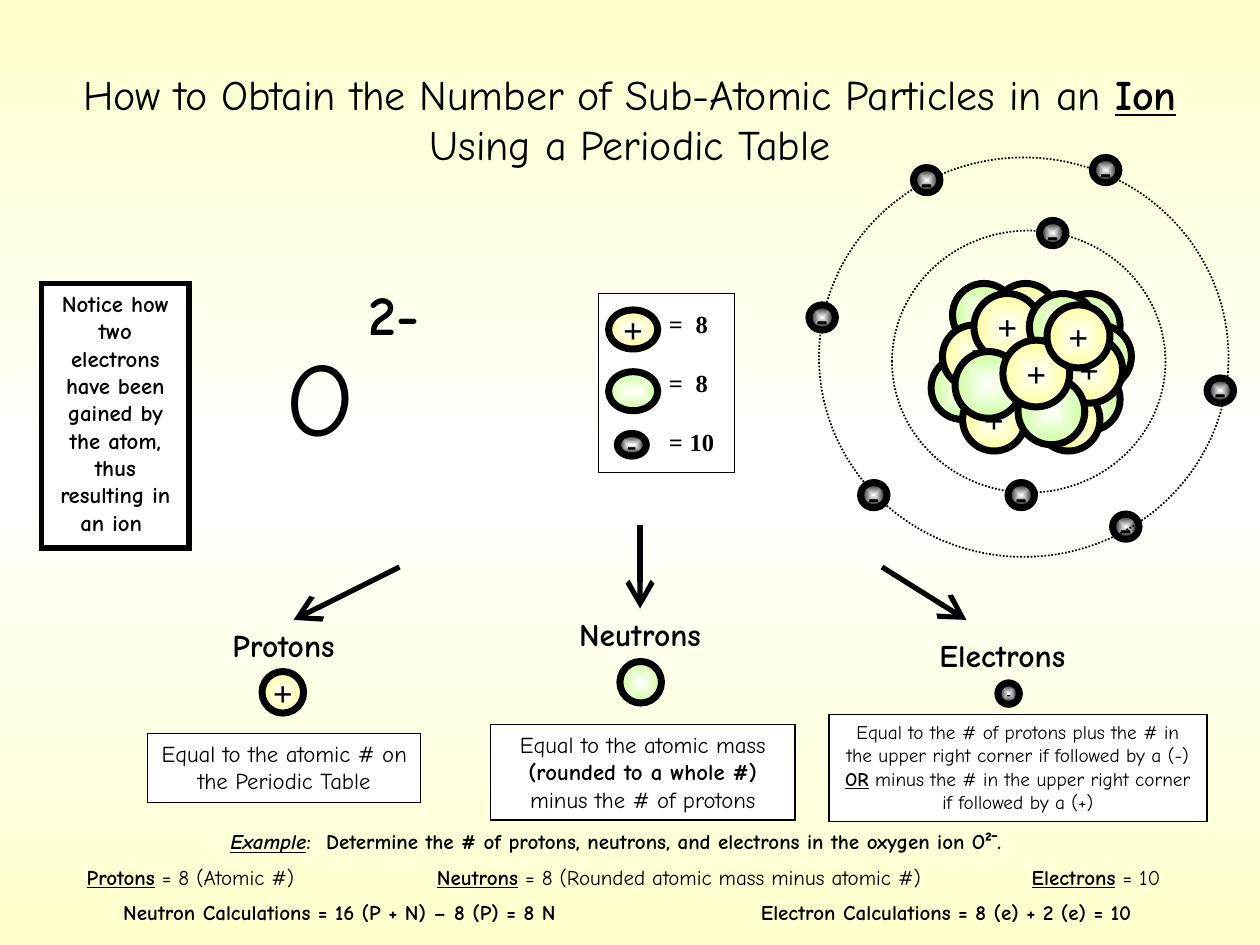
import copy
import lxml.etree
import pptx
import pptx.dml.color
import pptx.enum.dml
import pptx.enum.shapes
import pptx.enum.text
import pptx.oxml.ns
import pptx.util

Inches = pptx.util.Inches
Pt = pptx.util.Pt
qn = pptx.oxml.ns.qn
SHAPE = pptx.enum.shapes.MSO_SHAPE
ALIGN = pptx.enum.text.PP_ALIGN
ANCHOR = pptx.enum.text.MSO_ANCHOR

COLOURS = {"ink": "000000", "paper": "FFFFFF", "cream": "FFFFCC",
           "proton": "FFFF99", "neutron": "CCFF99", "electron": "000000"}
SYMBOLS = {"proton": "+", "neutron": "", "electron": "-"}
BODY_FONT = "Comic Neue"
SYMBOL_FONT = "Times New Roman"


def colour(name):
    return pptx.dml.color.RGBColor.from_string(COLOURS[name])


def box(left, top, width, height):
    return [Inches(value) for value in (left, top, width, height)]


class SlideBuilder:
    def __init__(self, slide):
        self.slide = slide

    def background(self):
        fill = self.slide.background.fill
        fill.gradient()
        fill.gradient_angle = 90
        stops = self.slide._element.find(".//" + qn("a:gsLst"))
        stops.insert(1, copy.deepcopy(stops[0]))
        for stop, position, name in zip(fill.gradient_stops, (0, 0.5, 1), ("cream", "paper", "cream")):
            stop.position = position
            stop.color.rgb = colour(name)

    def runs(self, paragraph, pieces, size, font=BODY_FONT):
        for text, style in pieces:
            run = paragraph.add_run()
            run.text = text
            run.font.name = font
            run.font.size = Pt(size)
            run.font.color.rgb = colour("ink")
            run.font.bold = "b" in style
            run.font.italic = "i" in style
            run.font.underline = "u" in style

    def title(self, place, pieces, size):
        shape = self.slide.shapes.title
        shape.left, shape.top, shape.width, shape.height = box(*place)
        shape.text_frame.vertical_anchor = ANCHOR.MIDDLE
        paragraph = shape.text_frame.paragraphs[0]
        paragraph.alignment = ALIGN.CENTER
        self.runs(paragraph, pieces, size)

    def text(self, place, pieces, size, align=ALIGN.CENTER, wrap=True, font=BODY_FONT):
        shape = self.slide.shapes.add_textbox(*box(*place))
        shape.text_frame.word_wrap = wrap
        paragraph = shape.text_frame.paragraphs[0]
        paragraph.alignment = align
        self.runs(paragraph, pieces, size, font)
        return shape

    def outlined_letter(self, place, letter, size):
        shape = self.text(place, [(letter, "")], size, wrap=False)
        properties = shape.text_frame.paragraphs[0].runs[0]._r.get_or_add_rPr()
        outline = lxml.etree.Element(qn("a:ln"), w=str(Pt(0.75)))
        fill = lxml.etree.SubElement(outline, qn("a:solidFill"))
        lxml.etree.SubElement(fill, qn("a:srgbClr"), val=COLOURS["ink"])
        properties.insert(0, outline)

    def shape(self, kind, place, width):
        shape = self.slide.shapes.add_shape(kind, *box(*place))
        shape.shadow.inherit = False
        shape.line.color.rgb = colour("ink")
        shape.line.width = Pt(width)
        lxml.etree.SubElement(shape.line._get_or_add_ln(), qn("a:miter"), lim="800000")
        return shape

    def panel(self, place, pieces=(), size=13, width=0.75):
        shape = self.shape(SHAPE.RECTANGLE, place, width)
        shape.fill.solid()
        shape.fill.fore_color.rgb = colour("paper")
        frame = shape.text_frame
        frame.word_wrap = True
        frame.vertical_anchor = ANCHOR.TOP
        frame.paragraphs[0].alignment = ALIGN.CENTER
        self.runs(frame.paragraphs[0], pieces, size)

    def particle(self, kind, left, top, width, height, size=20):
        shape = self.shape(SHAPE.OVAL, (left, top, width, height), 4)
        shape.fill.gradient()
        for stop, position, name in zip(shape.fill.gradient_stops, (0, 1), ("paper", kind)):
            stop.position = position
            stop.color.rgb = colour(name)
        gradient = shape._element.spPr.find(qn("a:gradFill"))
        gradient.remove(gradient.find(qn("a:lin")))
        centre = lxml.etree.SubElement(gradient, qn("a:path"), path="shape")
        lxml.etree.SubElement(centre, qn("a:fillToRect"), l="50000", t="50000", r="50000", b="50000")
        if SYMBOLS[kind]:
            frame = shape.text_frame
            frame.word_wrap = False
            frame.vertical_anchor = ANCHOR.MIDDLE
            frame.paragraphs[0].alignment = ALIGN.CENTER
            self.runs(frame.paragraphs[0], [(SYMBOLS[kind], "b")], size, SYMBOL_FONT)

    def orbit(self, place):
        shape = self.shape(SHAPE.OVAL, place, 1)
        shape.fill.background()
        shape.line.dash_style = pptx.enum.dml.MSO_LINE.ROUND_DOT

    def arrow(self, start, end):
        points = [Inches(value) for value in start + end]
        connector = self.slide.shapes.add_connector(pptx.enum.shapes.MSO_CONNECTOR.STRAIGHT, *points)
        connector.line.color.rgb = colour("ink")
        connector.line.width = Pt(3)
        lxml.etree.SubElement(connector.line._get_or_add_ln(), qn("a:tailEnd"), type="arrow", w="lg", len="lg")
        lxml.etree.SubElement(connector._element.spPr, qn("a:effectLst"))


def main():
    presentation = pptx.Presentation()
    presentation.slide_width, presentation.slide_height = Inches(10), Inches(7.5)
    builder = SlideBuilder(presentation.slides.add_slide(presentation.slide_layouts[5]))
    builder.background()
    builder.title((0.5, 0.3, 9, 1.28), [
        ("How to Obtain the Number of Sub-Atomic Particles in an ", ""),
        ("Ion", "bu"), (" ", "b"), ("Using a Periodic Table", "")], 24)

    builder.outlined_letter((2.08, 2.58, 0.92, 1.25), "O", 60)
    builder.text((2.83, 2.17, 0.74, 0.63), [("2-", "b")], 32, ALIGN.LEFT)
    builder.panel((0.33, 2.25, 1.17, 2.1), [
        ("Notice how two electrons have been gained by the atom, thus resulting in an ion ", "b")], width=3)

    for start, end in [((3.17, 4.5), (2.33, 4.92)), ((5.08, 4.17), (5.08, 4.83)), ((7, 4.5), (7.67, 4.92))]:
        builder.arrow(start, end)
    for label, left, top in [("Protons", 1.5, 4.92), ("Neutrons", 4.33, 4.83), ("Electrons ", 7.25, 5)]:
        builder.text((left, top, 1.5, 0.4), [(label, "b")], 18)
    builder.panel((1.17, 5.82, 2.17, 0.55), [("Equal to the atomic # on the Periodic Table", "")])
    builder.panel((3.89, 5.75, 2.42, 0.76), [
        ("Equal to the atomic mass ", ""), ("(rounded to a whole #)", "b"), (" minus the # of protons", "")])
    builder.panel((6.58, 5.67, 3, 0.85), [
        ("Equal to the # of protons plus the # in the upper right corner if followed by a (-) ", ""),
        ("OR", "bu"), (" minus the # in the upper right corner if followed by a (+)", "")], 11)
    builder.particle("proton", 2.08, 5.33, 0.33, 0.33)
    builder.particle("neutron", 4.92, 5.25, 0.33, 0.33)
    builder.particle("electron", 7.92, 5.42, 0.17, 0.17, 8)

    example_rows = [
        [(1.73, 0.9, [("Example", "biu"), (":", "b")]),
         (2.49, 6, [("Determine the # of protons, neutrons, and electrons in the oxygen ion O²¯.", "b")])],
        [(0.59, 2.3, [("Protons", "bu"), (" = 8 (Atomic #)", "")]),
         (3.37, 4.4, [("Neutrons", "bu"), (" = 8 (Rounded atomic mass minus atomic #)", "")]),
         (8.09, 1.6, [("Electrons", "bu"), (" = 10", "")])],
        [(0.88, 4.2, [("Neutron Calculations = 16 (P + N) – 8 (P) = 8 N", "b")]),
         (5.94, 3.7, [("Electron Calculations = 8 (e) + 2 (e) = 10", "b")])],
    ]
    for number, cells in enumerate(example_rows):
        for left, width, pieces in cells:
            builder.text((left, 6.53 + 0.28 * number, width, 0.3), pieces, 12, ALIGN.LEFT)

    nucleus = [
        ("neutron", 0.5, [(8.39, 2.33), (7.39, 2.83), (8.48, 2.58), (8.39, 2.92), (7.56, 2.25)]),
        ("proton", 0.5, [(8.23, 3.08), (7.89, 2.25), (7.48, 2.58), (7.64, 3.08)]),
        ("proton", 0.53, [(7.73, 2.33)]),
        ("neutron", 0.53, [(8.17, 2.33)]),
        ("proton", 0.53, [(8.38, 2.67)]),
        ("neutron", 0.53, [(7.58, 2.79), (8.08, 3)]),
        ("proton", 0.53, [(7.96, 2.7)]),
        ("proton", 0.5, [(8.31, 2.42)]),
    ]
    for kind, diameter, corners in nucleus:
        for left, top in corners:
            builder.particle(kind, left, top, diameter, diameter)
    builder.particle("electron", 8.83, 4.08, 0.21, 0.2)
    builder.orbit((7.08, 1.83, 2.17, 2.08))
    builder.orbit((6.5, 1.25, 3.25, 3.17))
    for left, top in [(8.67, 1.25), (9.58, 3), (6.83, 3.83), (7.25, 1.33), (6.42, 2.42), (8.25, 1.75), (8, 3.83)]:
        builder.particle("electron", left, top, 0.21, 0.2)

    builder.panel((4.75, 2.33, 1.08, 1.42))
    builder.particle("proton", 4.83, 2.46, 0.39, 0.31)
    builder.particle("neutron", 4.83, 2.95, 0.39, 0.31)
    builder.particle("electron", 4.9, 3.44, 0.23, 0.18, 16)
    for number, count in enumerate(("8", "8", "10")):
        top = 2.4 + 0.47 * number
        builder.text((5.21, top, 0.35, 0.32), [("=", "b")], 14, ALIGN.LEFT, font=SYMBOL_FONT)
        builder.text((5.32, top, 0.5, 0.32), [(count, "b")], 14, font=SYMBOL_FONT)

    presentation.save("out.pptx")


if __name__ == "__main__":
    main()
